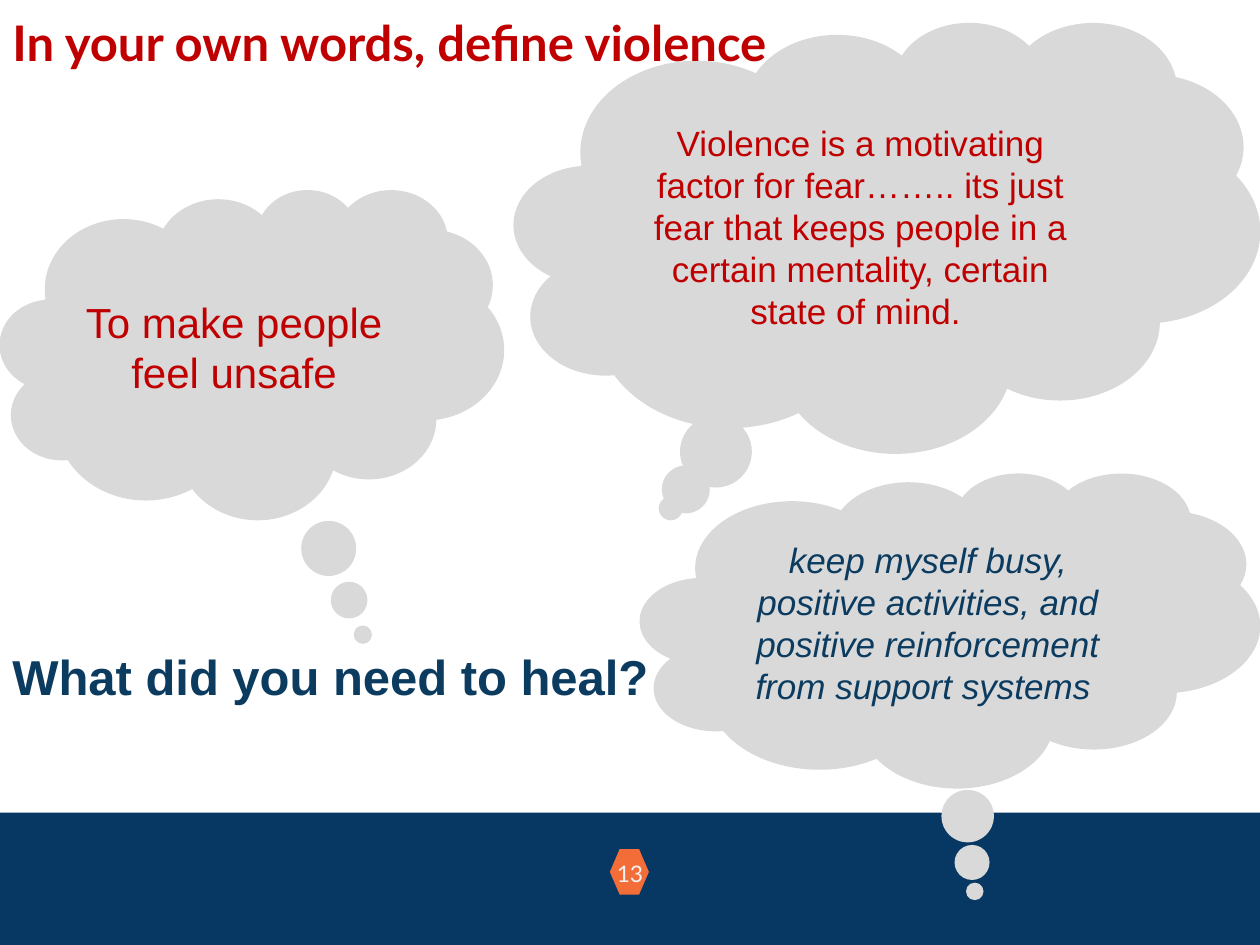
import pptx
import pptx.util
import pptx.dml.color
import pptx.enum.shapes
import pptx.enum.text

Inches = pptx.util.Inches
Color = pptx.dml.color.RGBColor
Kind = pptx.enum.shapes.MSO_SHAPE
Align = pptx.enum.text.PP_ALIGN
Anchor = pptx.enum.text.MSO_ANCHOR

RED = Color(0xC0, 0x00, 0x00)
NAVY = Color(0x07, 0x37, 0x63)
BLUE = Color(0x0C, 0x3B, 0x60)
GRAY = Color(0xD9, 0xD9, 0xD9)
ORANGE = Color(0xF3, 0x6D, 0x38)
PALE = Color(0xF3, 0xF3, 0xF3)


def write(frame, text, size=20, font="Arial", color=RED, bold=False,
          italic=False, align=Align.LEFT, anchor=Anchor.TOP, wrap=True):
    frame.word_wrap = wrap
    frame.vertical_anchor = anchor
    para = frame.paragraphs[0]
    para.alignment = align
    run = para.add_run()
    run.text = text
    run.font.size = pptx.util.Pt(size)
    run.font.name = font
    run.font.color.rgb = color
    run.font.bold = bold
    run.font.italic = italic


def place(slide, kind, box, fill):
    shape = slide.shapes.add_shape(kind, *map(Inches, box))
    shape.shadow.inherit = False
    shape.fill.solid()
    shape.fill.fore_color.rgb = fill
    shape.line.fill.background()
    return shape


def label(slide, box, text, inset=0.1, **style):
    frame = slide.shapes.add_textbox(*map(Inches, box)).text_frame
    frame.margin_top = frame.margin_bottom = Inches(inset)
    write(frame, text, **style)


def cloud(slide, box, tail, text, **style):
    shape = place(slide, Kind.CLOUD_CALLOUT, box, GRAY)
    # Tail tip, as a share of the cloud's size from its centre
    shape.adjustments[0], shape.adjustments[1] = tail
    write(shape.text_frame, text, align=Align.CENTER,
          anchor=Anchor.MIDDLE, **style)


def footer(slide, box):
    left, top, width, height = box
    place(slide, Kind.RECTANGLE, box, NAVY)
    # Page number badge, centred across the band
    mid = left + width / 2
    badge = place(slide, Kind.HEXAGON,
                  (mid - 0.16, top + 0.29, 0.31, 0.36), ORANGE)
    badge.adjustments[0] = 0.25
    label(slide, (mid - 0.3, top + 0.27, 0.6, 0.6), "13", size=13,
          font="Lato", color=PALE, align=Align.CENTER)


def main():
    deck = pptx.Presentation()
    deck.slide_width, deck.slide_height = Inches(10), Inches(7.5)
    slide = deck.slides.add_slide(deck.slide_layouts[6])

    footer(slide, (0, 6.45, 10, 1.05))

    # Definitions of violence
    cloud(slide, (4.08, 0.17, 5.92, 3.42), (-0.29, 0.63),
          "Violence is a motivating factor for fear…….. its just fear that "
          "keeps people in a certain mentality, certain state of mind. ")
    label(slide, (0, 0, 10, 0.94), "In your own words, define violence",
          size=28, font="Lato", bold=True)
    cloud(slide, (0, 1.5, 4, 2.62), (0.22, 0.85),
          "To make people feel unsafe", size=24)

    # Healing
    label(slide, (0, 5.08, 5.31, 0.57), "What did you need to heal?",
          inset=0.05, size=28, color=BLUE, bold=True, wrap=False)
    cloud(slide, (5.08, 3.75, 4.92, 2.5), (0.04, 0.83),
          "keep myself busy, positive activities, and positive "
          "reinforcement from support systems ", color=BLUE, italic=True)

    deck.save("out.pptx")


if __name__ == "__main__":
    main()
